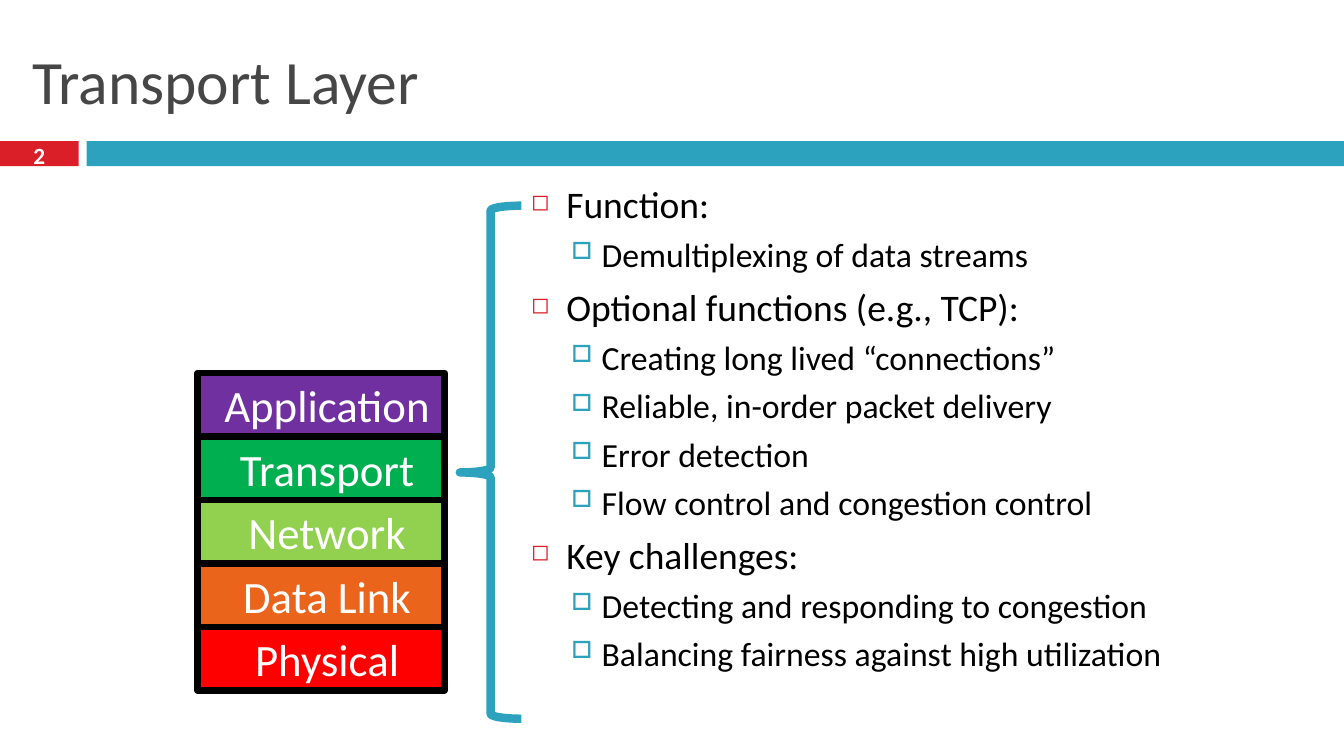
from lxml import etree
from pptx import Presentation
from pptx import util as u
from pptx.dml.color import RGBColor
from pptx.enum import shapes, text
from pptx.oxml import ns

presentation = Presentation()
presentation.slide_width = u.Inches(13.33)
presentation.slide_height = u.Inches(7.5)
slide = presentation.slides.add_slide(presentation.slide_layouts[6])
color = RGBColor.from_string

RED, TEAL, WHITE, BLACK = "DA1F28", "2DA2BF", "FFFFFF", "000000"


def area(left, top, width, height):
    across = presentation.slide_width / 100
    down = presentation.slide_height / 100
    return int(left * across), int(top * down), int(width * across), int(height * down)


def add_run(paragraph, words, size, hex_color, bold=False):
    run = paragraph.add_run()
    run.text = words
    run.font.name = "Calibri"
    run.font.size = u.Pt(size)
    run.font.bold = bold
    run.font.color.rgb = color(hex_color)


bar_top, bar_height, badge_width, bar_left = 18.67, 3.33, 5.85, 6.45
for left, width, fill in [(0, badge_width, RED), (bar_left, 100 - bar_left, TEAL)]:
    bar = slide.shapes.add_shape(
        shapes.MSO_SHAPE.RECTANGLE, *area(left, bar_top, width, bar_height))
    bar.shadow.inherit = False
    bar.fill.solid()
    bar.fill.fore_color.rgb = color(fill)
    bar.line.fill.background()

headings = [
    ("Transport Layer", area(1.65, 3.33, 96.7, 14.4), 44, "464646", False,
     text.PP_ALIGN.LEFT),
    ("2", area(0, 18.27, badge_width, 4.4), 16.6, WHITE, True, text.PP_ALIGN.CENTER),
]
for words, place, size, hex_color, bold, alignment in headings:
    frame = slide.shapes.add_textbox(*place).text_frame
    frame.word_wrap = True
    frame.vertical_anchor = text.MSO_ANCHOR.MIDDLE
    frame.paragraphs[0].alignment = alignment
    add_run(frame.paragraphs[0], words, size, hex_color, bold)

outline = [
    (0, "Function:"),
    (1, "Demultiplexing of data streams"),
    (0, "Optional functions (e.g., TCP):"),
    (1, "Creating long lived “connections”"),
    (1, "Reliable, in-order packet delivery"),
    (1, "Error detection"),
    (1, "Flow control and congestion control"),
    (0, "Key challenges:"),
    (1, "Detecting and responding to congestion"),
    (1, "Balancing fairness against high utilization"),
]
level_styles = [
    (26.8, 7, 0.35, 0.35, "◻", RED, 60),
    (24.1, 5.5, 0.7, 0.3, "□", TEAL, 70),
]
body = slide.shapes.add_textbox(*area(38.78, 23.33, 48.69, 74.4)).text_frame
body.word_wrap = True
for index, (level, words) in enumerate(outline):
    size, gap, margin, hanging, bullet, bullet_color, bullet_share = level_styles[level]
    paragraph = body.add_paragraph() if index else body.paragraphs[0]
    paragraph.level = level
    paragraph.space_before = u.Pt(gap)
    add_run(paragraph, words, size, BLACK)
    properties = paragraph._p.get_or_add_pPr()
    properties.set("marL", str(u.Inches(margin)))
    properties.set("indent", str(-u.Inches(hanging)))
    bullet_fill = etree.SubElement(properties, ns.qn("a:buClr"))
    etree.SubElement(bullet_fill, ns.qn("a:srgbClr"), val=bullet_color)
    etree.SubElement(properties, ns.qn("a:buSzPct"), val=str(bullet_share * 1000))
    etree.SubElement(properties, ns.qn("a:buChar"), char=bullet)

layers = [
    ("Application", "7030A0"),
    ("Transport", "00B050"),
    ("Network", "92D050"),
    ("Data Link", "EB641B"),
    ("Physical", "FF0000"),
]
stack_top, layer_height = 49.33, 8.4
for row, (words, fill) in enumerate(layers):
    layer = slide.shapes.add_shape(
        shapes.MSO_SHAPE.RECTANGLE,
        *area(14.7, stack_top + row * layer_height, 18.38, layer_height))
    layer.shadow.inherit = False
    layer.fill.solid()
    layer.fill.fore_color.rgb = color(fill)
    layer.line.color.rgb = color(BLACK)
    layer.line.width = u.Pt(4.5)
    layer.text_frame.vertical_anchor = text.MSO_ANCHOR.MIDDLE
    paragraph = layer.text_frame.paragraphs[0]
    paragraph.alignment = text.PP_ALIGN.CENTER
    paragraph._p.get_or_add_pPr().set("marL", str(u.Inches(0.12)))
    add_run(paragraph, words, 32, WHITE)

brace = slide.shapes.add_shape(
    shapes.MSO_SHAPE.LEFT_BRACE, *area(34.21, 27.2, 4.58, 67.87))
brace.shadow.inherit = False
brace.adjustments[0] = 0.08
brace.adjustments[1] = 0.52
brace.fill.background()
brace.line.color.rgb = color(TEAL)
brace.line.width = u.Pt(6)

presentation.save("out.pptx")
